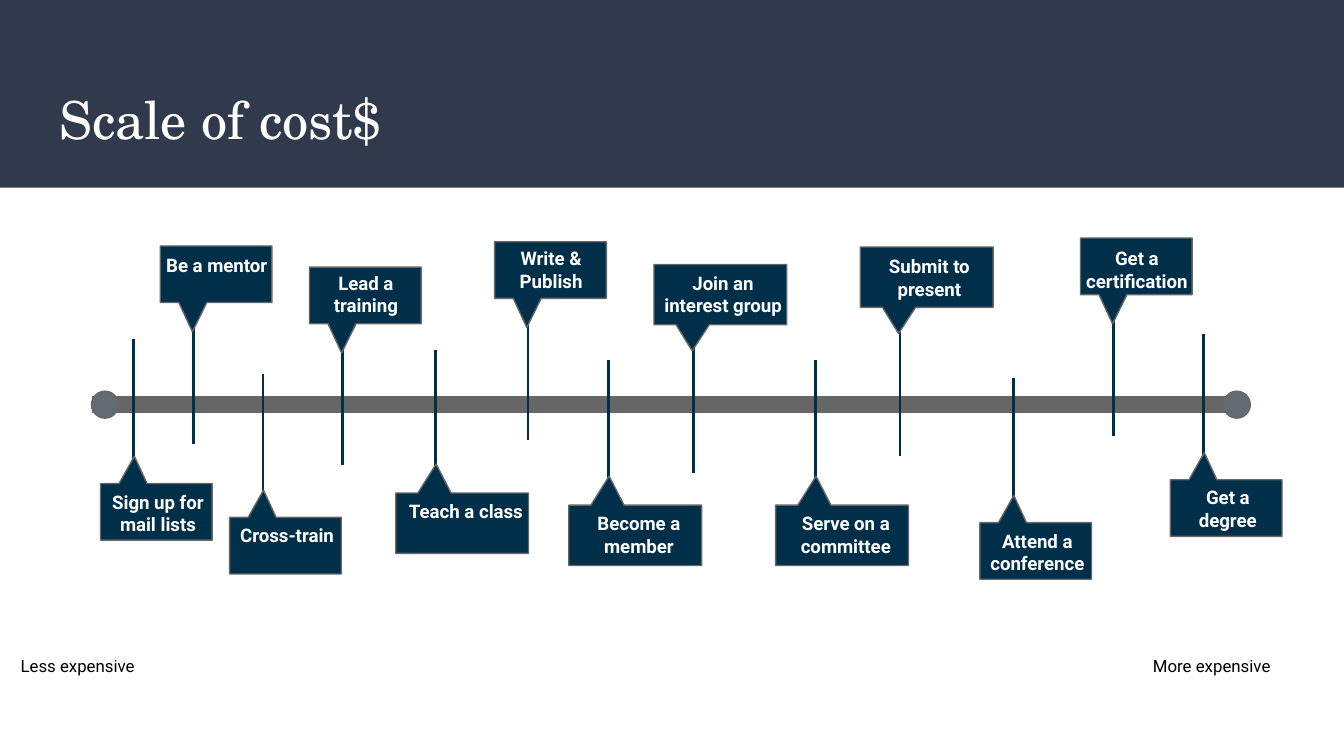
from lxml.etree import SubElement
from pptx import Presentation
from pptx.dml.color import RGBColor
from pptx.enum.shapes import MSO_CONNECTOR, MSO_SHAPE
from pptx.enum.text import MSO_ANCHOR, PP_ALIGN
from pptx.oxml.ns import qn
from pptx.util import Cm, Pt

SLATE = RGBColor(0x31, 0x39, 0x4D)
NAVY = RGBColor(0x00, 0x2F, 0x4A)
GRAY = RGBColor(0x66, 0x66, 0x66)
DOT_GRAY = RGBColor(0x62, 0x6B, 0x73)
WHITE = RGBColor(0xFF, 0xFF, 0xFF)
BLACK = RGBColor(0x00, 0x00, 0x00)

TITLE = "Scale of cost$"

# text, side of the axis, width class, stem x, callout top, label top (cm)
STEPS = [
    ("Sign up for mail lists", "below", "narrow", 2.53, 9.14, 9.02),
    ("Be a mentor", "above", "narrow", 3.66, 4.65, 4.59),
    ("Cross-train", "below", "narrow", 4.97, 9.78, 9.69),
    ("Lead a training", "above", "narrow", 6.48, 5.05, 4.88),
    ("Teach a class", "below", "wide", 8.23, 9.32, 9.24),
    ("Write & Publish", "above", "narrow", 9.98, 4.57, 4.42),
    ("Become a member", "below", "wide", 11.5, 9.55, 9.43),
    ("Join an\ninterest group", "above", "wide", 13.11, 5.0, 4.88),
    ("Serve on a committee", "below", "wide", 15.41, 9.55, 9.43),
    ("Submit to present", "above", "wide", 17.01, 4.67, 4.57),
    ("Attend a conference", "below", "narrow", 19.15, 9.88, 9.76),
    ("Get a certification", "above", "narrow", 21.05, 4.5, 4.42),
    ("Get a degree", "below", "narrow", 22.75, 9.07, 8.94),
]
# text, left, width (cm)
AXIS_ENDS = [("Less expensive", 0.14, 2.72), ("More expensive", 21.54, 3.0)]

# callout width, callout height, label width, label height, stem to callout edge
SIZES = {"narrow": (2.11, 1.07, 2.49, 1.45, 0.63),
         "wide": (2.51, 1.14, 2.97, 1.52, 0.75)}
LABEL_SHIFT = {"below": 0.16, "above": 0.18}
POINTERS = {("below", "narrow"): (-0.196, -0.981),
            ("below", "wide"): (-0.196, -0.981),
            ("above", "narrow"): (-0.212, 1.015),
            ("above", "wide"): (-0.212, 0.933)}
STEM_LENGTH = 2.62
STEM_GAP = {"narrow": 0.05, "wide": 0.18}
AXIS_LEFT, AXIS_RIGHT, AXIS_Y = 1.73, 23.47, 7.65
DOT = 0.51
DOT_LEFTS = (1.73, 23.12)


def add_shape(shapes, kind, left, top, width, height, fill, outline=None):
    shape = shapes.add_shape(kind, Cm(left), Cm(top), Cm(width), Cm(height))
    shape.shadow.inherit = False
    shape.fill.solid()
    shape.fill.fore_color.rgb = fill
    if outline is None:
        shape.line.fill.background()
    else:
        shape.line.color.rgb = outline
        shape.line.width = Pt(0.75)
    return shape


def add_line(shapes, x1, y1, x2, y2, color, weight):
    line = shapes.add_connector(MSO_CONNECTOR.STRAIGHT, Cm(x1), Cm(y1), Cm(x2), Cm(y2))
    line.line.color.rgb = color
    line.line.width = Pt(weight)
    SubElement(line._element.spPr, qn("a:effectLst"))


def set_text(box, text, font, size, color, bold=False, align=PP_ALIGN.LEFT,
             anchor=MSO_ANCHOR.TOP):
    frame = box.text_frame
    frame.text = text
    frame.word_wrap = True
    frame.vertical_anchor = anchor
    frame.margin_left = frame.margin_right = Cm(0.25)
    frame.margin_top = frame.margin_bottom = Cm(0.25)
    for para in frame.paragraphs:
        para.alignment = align
        for span in para.runs:
            span.font.name = font
            span.font.size = Pt(size)
            span.font.bold = bold
            span.font.color.rgb = color


def add_step(shapes, text, side, size, stem_x, top, label_top):
    """Add a stem across the axis and the callout at its end."""
    width, height, label_width, label_height, inset = SIZES[size]
    if side == "above":
        stem_top = top + height + STEM_GAP[size]
    else:
        stem_top = label_top - STEM_LENGTH
    add_line(shapes, stem_x, stem_top, stem_x, stem_top + STEM_LENGTH, NAVY, 1.5)

    group = shapes.add_group_shape().shapes
    left = stem_x - inset
    callout = add_shape(group, MSO_SHAPE.RECTANGULAR_CALLOUT, left, top,
                        width, height, NAVY, GRAY)
    callout.adjustments[0], callout.adjustments[1] = POINTERS[side, size]
    label = group.add_textbox(Cm(left - LABEL_SHIFT[side]), Cm(label_top),
                              Cm(label_width), Cm(label_height))
    set_text(label, text, "Roboto", 10, WHITE, bold=True, align=PP_ALIGN.CENTER)


def main():
    deck = Presentation()
    deck.slide_width, deck.slide_height = Cm(25.4), Cm(14.29)
    page = deck.slides.add_slide(deck.slide_layouts[5])
    shapes = page.shapes

    add_shape(shapes, MSO_SHAPE.RECTANGLE, 0, 0, 25.4, 3.55, SLATE)
    title = shapes.title
    title.left, title.top = Cm(0.87), Cm(1.38)
    title.width, title.height = Cm(23.67), Cm(1.73)
    set_text(title, TITLE, "TeX Gyre Schola", 28, WHITE, anchor=MSO_ANCHOR.MIDDLE)
    shapes._spTree.append(title._element)  # bring the title in front of the band

    add_line(shapes, AXIS_LEFT, AXIS_Y, AXIS_RIGHT, AXIS_Y, GRAY, 9)
    for left in DOT_LEFTS:
        add_shape(shapes, MSO_SHAPE.OVAL, left, AXIS_Y - DOT / 2, DOT, DOT, DOT_GRAY, GRAY)
    for text, left, width in AXIS_ENDS:
        box = shapes.add_textbox(Cm(left), Cm(12.21), Cm(width), Cm(1.07))
        set_text(box, text, "Roboto", 9, BLACK)

    for step in STEPS:
        add_step(shapes, *step)

    deck.save("out.pptx")


if __name__ == "__main__":
    main()
